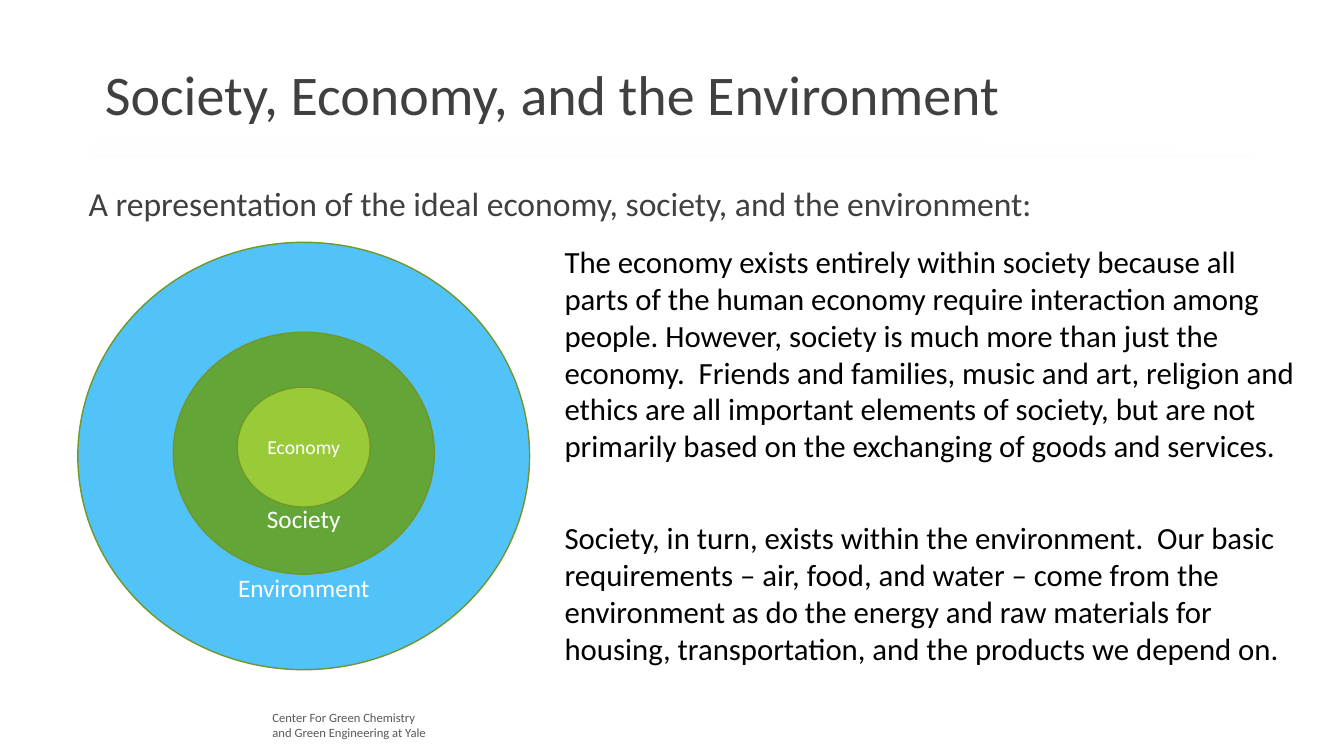
from dataclasses import dataclass

from lxml.etree import SubElement
from pptx import Presentation
from pptx.dml.color import RGBColor
from pptx.enum.shapes import MSO_CONNECTOR, MSO_SHAPE
from pptx.enum.text import MSO_ANCHOR, PP_ALIGN
from pptx.oxml.ns import qn
from pptx.util import Inches, Pt

WIDTH, HEIGHT = Inches(13.33), Inches(7.5)


@dataclass(frozen=True)
class Theme:
    font: str = "Calibri"
    title: int = 40
    lead: int = 24
    body: int = 22
    label: int = 18
    small: int = 14
    foot: int = 9
    dark: str = "404040"
    grey: str = "595959"
    black: str = "000000"
    white: str = "FFFFFF"
    sky: str = "51C3F9"
    leaf: str = "63A537"
    lime: str = "99CB38"
    edge: str = "719629"
    rules: tuple = ("4EB3CF", "44C1A3", "37A76F")
    faint: int = 3


THEME = Theme()
LEFT = 5.85
CENTRE = 22.6

BODY = (
    "The economy exists entirely within society because all parts of the human "
    "economy require interaction among people. However, society is much more than "
    "just the economy.  Friends and families, music and art, religion and ethics "
    "are all important elements of society, but are not primarily based on the "
    "exchanging of goods and services.",
    "Society, in turn, exists within the environment.  Our basic requirements – "
    "air, food, and water – come from the environment as do the energy and raw "
    "materials for housing, transportation, and the products we depend on.",
)

# Label, top, width, height, fill, type size, anchor
RINGS = (
    ("Environment", 32.05, 33.61, 56.53, THEME.sky, THEME.label, MSO_ANCHOR.BOTTOM),
    ("Society", 43.95, 19.43, 32, THEME.leaf, THEME.label, MSO_ANCHOR.BOTTOM),
    ("Economy", 51.2, 9.9, 15.87, THEME.lime, THEME.small, MSO_ANCHOR.MIDDLE),
)

# Left and right end of each rule under the title
RULES = ((6.9, 73.29), (6.75, 87.85), (6.83, 93.17))


def place(left, top, width, height):
    """Turn percentages of the slide's size into lengths."""
    shares = ((left, WIDTH), (top, HEIGHT), (width, WIDTH), (height, HEIGHT))
    return [round(share * full / 100) for share, full in shares]


def write(frame, lines, size, color, anchor=MSO_ANCHOR.TOP, wrap=True, gap=0, **form):
    """Fill a frame; gap is the space between paragraphs, form their format."""
    frame.word_wrap = wrap
    frame.vertical_anchor = anchor
    for i, line in enumerate(lines):
        para = frame.add_paragraph() if i else frame.paragraphs[0]
        para.text = line
        para.space_before = Pt(gap if i else 0)
        for name, value in form.items():
            setattr(para, name, value)
        font = para.runs[0].font
        for name, value in {"name": THEME.font, "size": Pt(size)}.items():
            setattr(font, name, value)
        font.color.rgb = RGBColor.from_string(color)


def add_text(slide, area, lines, size, color, **form):
    box = slide.shapes.add_textbox(*place(*area))
    write(box.text_frame, lines, size, color, **form)


def add_rule(slide, start, end, top, color):
    """Draw a thin, almost clear line across the slide."""
    ends = place(start, top, end, top)
    rule = slide.shapes.add_connector(MSO_CONNECTOR.STRAIGHT, *ends)
    rule.line.width = Pt(0.5)
    rule.line.color.rgb = RGBColor.from_string(color)
    props = rule.element.spPr
    tint = props.find(".//" + qn("a:srgbClr"))
    SubElement(tint, qn("a:alpha"), val=str(THEME.faint * 1000))
    SubElement(props, qn("a:effectLst"))


def add_ring(group, label, top, width, height, fill, size, anchor):
    area = place(CENTRE - width / 2, top, width, height)
    ring = group.shapes.add_shape(MSO_SHAPE.OVAL, *area)
    ring.shadow.inherit = False
    ring.fill.solid()
    ring.fill.fore_color.rgb = RGBColor.from_string(fill)
    ring.line.color.rgb = RGBColor.from_string(THEME.edge)
    ring.line.width = Pt(1)
    write(ring.text_frame, [label], size, THEME.white, anchor,
          alignment=PP_ALIGN.CENTER)


def main():
    deck = Presentation()
    deck.slide_width, deck.slide_height = WIDTH, HEIGHT
    slide = deck.slides.add_slide(deck.slide_layouts[6])

    for i, (start, end) in enumerate(RULES):
        add_rule(slide, start, end, 18.8 + i * 0.93, THEME.rules[i])

    add_text(slide, (LEFT, 7.2, 70.44, 10.27),
             ["Society, Economy, and the Environment"],
             THEME.title, THEME.dark, wrap=False, alignment=PP_ALIGN.CENTER)
    add_text(slide, (LEFT, 24.07, 94.15, 6.13),
             ["A representation of the ideal economy, society, and the environment:"],
             THEME.lead, THEME.dark, anchor=MSO_ANCHOR.MIDDLE, line_spacing=0.9)
    add_text(slide, (41.27, 31.41, 55.89, 57.87), BODY,
             THEME.body, THEME.black, gap=38.8)

    group = slide.shapes.add_group_shape()
    for ring in RINGS:
        add_ring(group, *ring)

    add_text(slide, (19.53, 93.27, 13.95, 5.33),
             ["Center For Green Chemistry", "and Green Engineering at Yale"],
             THEME.foot, THEME.grey)
    deck.save("out.pptx")


if __name__ == "__main__":
    main()
